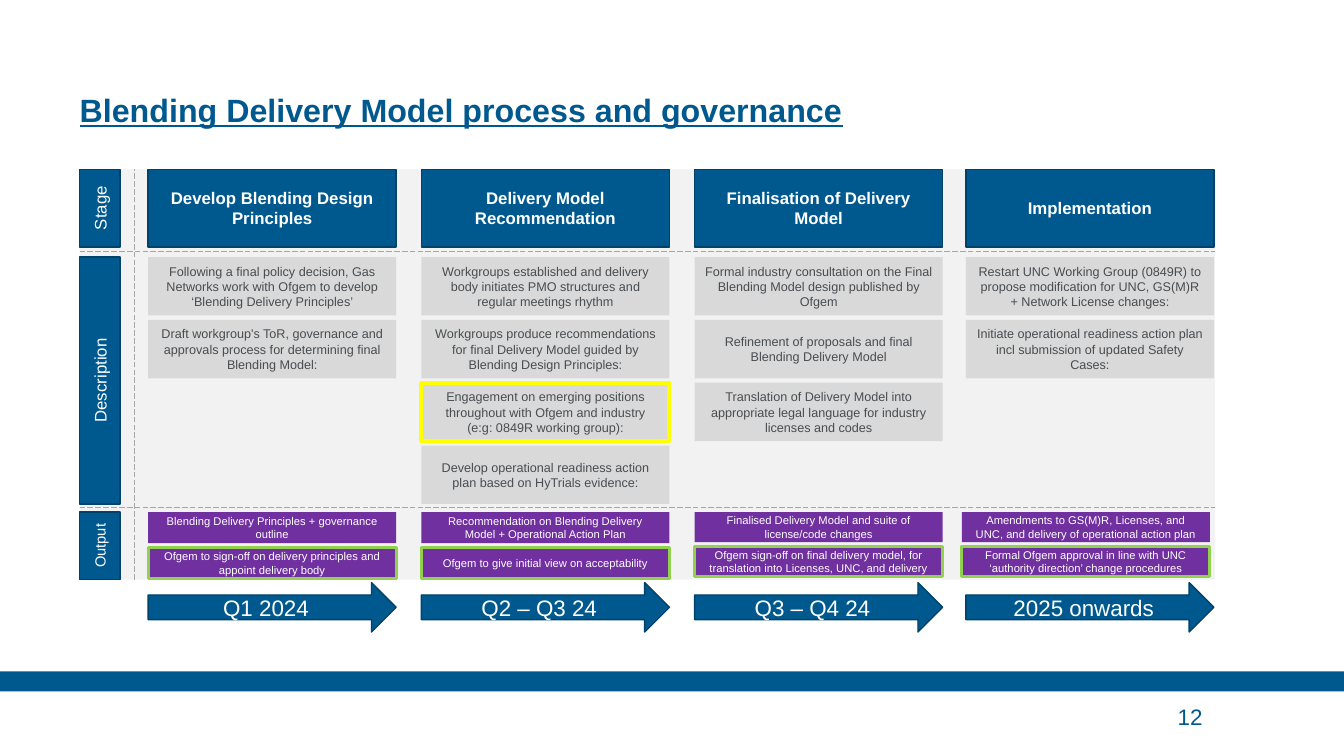
from dataclasses import dataclass

from lxml.etree import SubElement
from pptx import Presentation
from pptx.dml.color import RGBColor
from pptx.enum.dml import MSO_LINE
from pptx.enum.shapes import MSO_CONNECTOR, MSO_SHAPE
from pptx.enum.text import MSO_ANCHOR, PP_ALIGN
from pptx.oxml.ns import qn
from pptx.util import Inches, Pt

BLUE = RGBColor(0x00, 0x59, 0x8E)
DARK_BLUE = RGBColor(0x00, 0x42, 0x69)
WHITE = RGBColor(0xFF, 0xFF, 0xFF)
PANEL_GREY = RGBColor(0xF2, 0xF2, 0xF2)
BOX_GREY = RGBColor(0xD9, 0xD9, 0xD9)
DASH_GREY = RGBColor(0xA6, 0xA6, 0xA6)
TEXT_GREY = RGBColor(0x48, 0x4D, 0x51)
PURPLE = RGBColor(0x70, 0x30, 0xA0)
GREEN = RGBColor(0x92, 0xD0, 0x50)
YELLOW = RGBColor(0xFF, 0xFF, 0x00)

LEFT, RIGHT = 0.79, 12.05
STAGE_TOP, STAGE_HEIGHT = 1.68, 0.77
DESCRIPTION_TOP, DESCRIPTION_HEIGHT = 2.55, 2.45
OUTPUT_TOP, BOTTOM = 5.08, 5.75
COLUMN_WIDTH = 2.46
STEP_HEIGHT = 0.58
STEP_PITCH = (DESCRIPTION_HEIGHT - STEP_HEIGHT) / 3
OUTPUT_GAP = 0.04


@dataclass
class Stage:
    left: float
    name: str
    steps: list
    output: str
    approval: str
    period: str
    output_left: float
    output_height: float
    highlighted_step: int = -1


STAGES = [
    Stage(1.47, "Develop Blending Design Principles",
          ["Following a final policy decision, Gas Networks work with Ofgem to "
           "develop ‘Blending Delivery Principles’",
           "Draft workgroup's ToR, governance and approvals process for "
           "determining final Blending Model:"],
          "Blending Delivery Principles + governance outline",
          "Ofgem to sign-off on delivery principles and appoint delivery body",
          "Q1 2024", 1.47, 0.31),
    Stage(4.18, "Delivery Model Recommendation",
          ["Workgroups established and delivery body initiates PMO structures "
           "and regular meetings rhythm",
           "Workgroups produce recommendations for final Delivery Model guided "
           "by Blending Design Principles:",
           "Engagement on emerging positions throughout with Ofgem and industry "
           "(e:g: 0849R working group):",
           "Develop operational readiness action plan based on HyTrials evidence:"],
          "Recommendation on Blending Delivery Model + Operational Action Plan",
          "Ofgem to give initial view on acceptability",
          "Q2 – Q3 24", 4.18, 0.31, highlighted_step=2),
    Stage(6.89, "Finalisation of Delivery Model",
          ["Formal industry consultation on the Final Blending Model design "
           "published by Ofgem",
           "Refinement of proposals and final Blending Delivery Model",
           "Translation of Delivery Model into appropriate legal language for "
           "industry licenses and codes"],
          "Finalised Delivery Model and suite of license/code changes",
          "Ofgem sign-off on final delivery model, for translation into "
          "Licenses, UNC, and delivery",
          "Q3 – Q4 24", 6.89, 0.3),
    Stage(9.58, "Implementation",
          ["Restart UNC Working Group (0849R) to propose modification for UNC, "
           "GS(M)R + Network License changes:",
           "Initiate operational readiness action plan incl submission of "
           "updated Safety Cases:"],
          "Amendments to GS(M)R, Licenses, and UNC, and delivery of operational "
          "action plan",
          "Formal Ofgem approval in line with UNC ‘authority direction’ change "
          "procedures",
          "2025 onwards", 9.54, 0.3),
]


class ProcessSlide:
    font = "Arial"

    def __init__(self, slide):
        self.shapes = slide.shapes

    def add_text(self, frame, text, size, color, bold=False, underline=False):
        frame.word_wrap = True
        run = frame.paragraphs[0].add_run()
        run.text = text
        run.font.name = self.font
        run.font.size = Pt(size)
        run.font.color.rgb = color
        run.font.bold = bold
        run.font.underline = underline

    def box(self, left, top, width, height, fill, text="", size=12, color=WHITE,
            bold=False, border=None, border_width=1, kind=MSO_SHAPE.RECTANGLE):
        shape = self.shapes.add_shape(
            kind, Inches(left), Inches(top), Inches(width), Inches(height))
        shape.shadow.inherit = False
        shape.fill.solid()
        shape.fill.fore_color.rgb = fill
        if border is None:
            shape.line.fill.background()
        else:
            shape.line.color.rgb = border
            shape.line.width = Pt(border_width)
        if text:
            frame = shape.text_frame
            frame.vertical_anchor = MSO_ANCHOR.MIDDLE
            frame.paragraphs[0].alignment = PP_ALIGN.CENTER
            self.add_text(frame, text, size, color, bold)
        return shape

    def row_label(self, top, height, text, size=12):
        """Add a row heading that reads from bottom to top."""
        label = self.box(LEFT, top, 0.4, height, BLUE, text, size, border=DARK_BLUE)
        label.text_frame._txBody.bodyPr.set("vert", "vert270")

    def label(self, left, top, width, height, text, size, anchor,
              bold=False, underline=False, line_spacing=None):
        frame = self.shapes.add_textbox(
            Inches(left), Inches(top), Inches(width), Inches(height)).text_frame
        frame.margin_left = frame.margin_right = 0
        frame.margin_top = frame.margin_bottom = 0
        frame.vertical_anchor = anchor
        if line_spacing:
            frame.paragraphs[0].line_spacing = Pt(line_spacing)
        self.add_text(frame, text, size, BLUE, bold, underline)

    def divider(self, x1, y1, x2, y2):
        line = self.shapes.add_connector(
            MSO_CONNECTOR.STRAIGHT, Inches(x1), Inches(y1), Inches(x2), Inches(y2))
        line.line.color.rgb = DASH_GREY
        line.line.width = Pt(0.5)
        line.line.dash_style = MSO_LINE.LONG_DASH
        SubElement(line._element.spPr, qn("a:effectLst"))

    def stage_column(self, stage):
        self.box(stage.left, STAGE_TOP, COLUMN_WIDTH, STAGE_HEIGHT, BLUE,
                 stage.name, bold=True, border=DARK_BLUE)
        for i, step in enumerate(stage.steps):
            self.box(stage.left, DESCRIPTION_TOP + i * STEP_PITCH, COLUMN_WIDTH,
                     STEP_HEIGHT, BOX_GREY, step, 9, TEXT_GREY,
                     border=YELLOW if i == stage.highlighted_step else None,
                     border_width=2.75)
        approval_top = OUTPUT_TOP + stage.output_height + OUTPUT_GAP
        for top, text, border in ((OUTPUT_TOP, stage.output, None),
                                  (approval_top, stage.approval, GREEN)):
            self.box(stage.output_left, top, COLUMN_WIDTH, stage.output_height,
                     PURPLE, text, 8, border=border, border_width=2.25)
        self.box(stage.left, 5.78, COLUMN_WIDTH, 0.49, BLUE, stage.period, 16,
                 border=DARK_BLUE, kind=MSO_SHAPE.RIGHT_ARROW)


def main():
    deck = Presentation()
    deck.slide_width, deck.slide_height = Inches(13.33), Inches(7.5)
    page = ProcessSlide(deck.slides.add_slide(deck.slide_layouts[6]))

    page.box(0, 6.66, 13.33, 0.2, BLUE)
    page.box(LEFT, STAGE_TOP, RIGHT - LEFT, BOTTOM - STAGE_TOP, PANEL_GREY)
    page.label(LEFT, 0.26, 9.84, 1.02, "Blending Delivery Model process and governance",
               23, MSO_ANCHOR.BOTTOM, bold=True, underline=True, line_spacing=30)
    page.label(11.68, 6.91, 1.23, 0.39, "12", 16, MSO_ANCHOR.MIDDLE)

    page.row_label(STAGE_TOP, STAGE_HEIGHT, "Stage")
    page.row_label(DESCRIPTION_TOP, DESCRIPTION_HEIGHT, "Description")
    page.row_label(OUTPUT_TOP, BOTTOM - OUTPUT_TOP, "Output", 10.5)
    for y in (2.49, 5.03):
        page.divider(LEFT, y, RIGHT, y)
    page.divider(1.33, BOTTOM, 1.33, STAGE_TOP)
    for stage in STAGES:
        page.stage_column(stage)

    deck.save("out.pptx")


if __name__ == "__main__":
    main()
